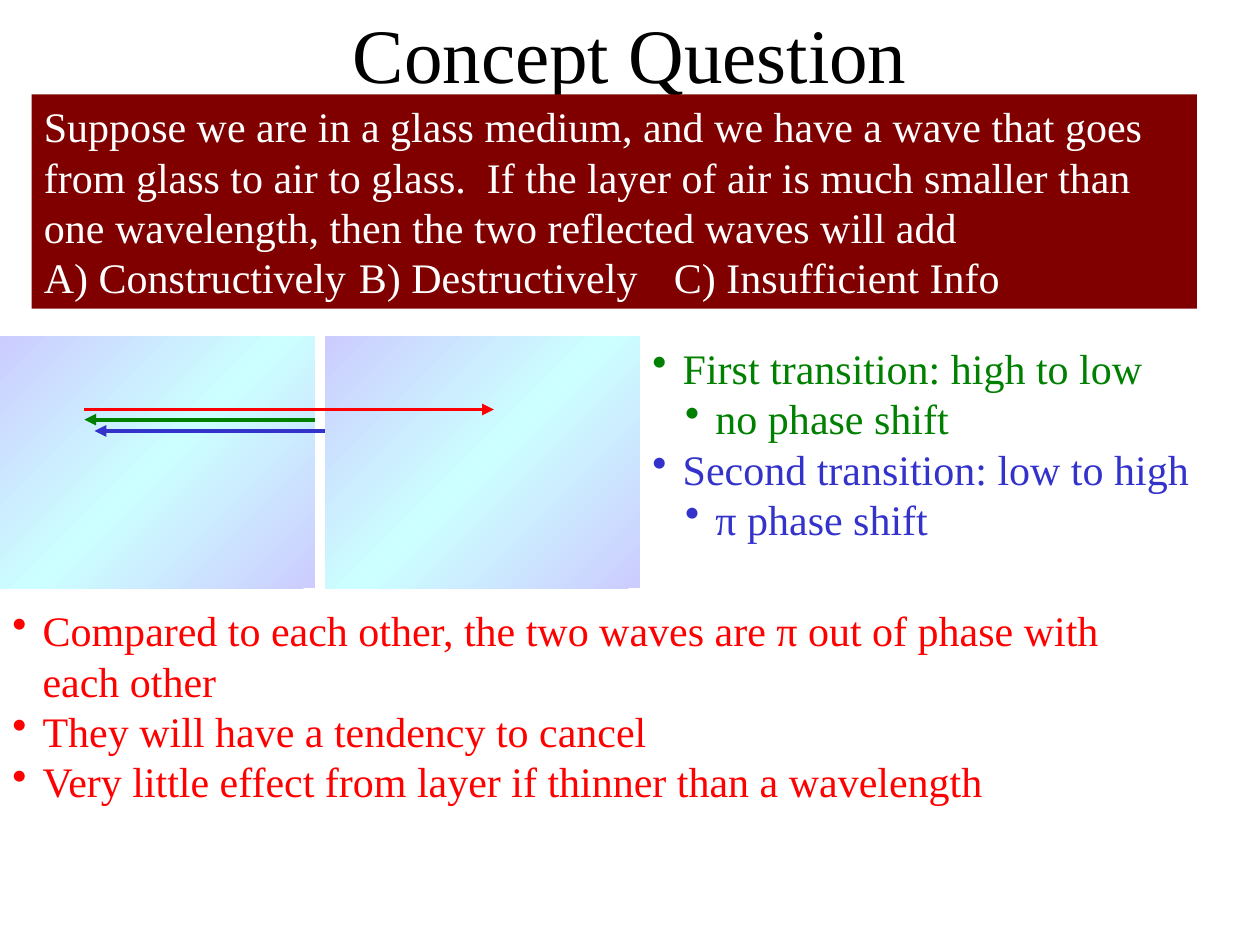
from copy import deepcopy

from lxml.etree import SubElement
from pptx import Presentation
from pptx.dml.color import RGBColor
from pptx.enum.shapes import MSO_CONNECTOR, MSO_SHAPE
from pptx.enum.text import MSO_ANCHOR, MSO_AUTO_SIZE, PP_ALIGN
from pptx.oxml.ns import qn
from pptx.util import Inches, Pt

FONT = "Times New Roman"
COLORS = {
    "black": "000000", "white": "FFFFFF", "maroon": "800000",
    "red": "FF0000", "green": "008000", "blue": "3333CC",
    "lavender": "CCCCFF", "cyan": "CCFFFF",
}

TITLE = "Concept Question"
QUESTION = [
    "Suppose we are in a glass medium, and we have a wave that goes from glass "
    "to air to glass.  If the layer of air is much smaller than one wavelength, "
    "then the two reflected waves will add",
    "A) Constructively\tB) Destructively\tC) Insufficient Info",
]
TRANSITIONS = [
    ("First transition: high to low", 0, "green"),
    ("no phase shift", 1, "green"),
    ("Second transition: low to high", 0, "blue"),
    ("π phase shift", 1, "blue"),
]
CONCLUSIONS = [
    ("Compared to each other, the two waves are π out of phase with each other", 0, "red"),
    ("They will have a tendency to cancel", 0, "red"),
    ("Very little effect from layer if thinner than a wavelength", 0, "red"),
]

GLASS_TOP, GLASS_WIDTH, GLASS_HEIGHT, AIR_GAP = 2.67, 2.5, 2, 0.08
SECOND_GLASS = GLASS_WIDTH + AIR_GAP
GLASS_STOPS = [(0, "lavender"), (0.5, "cyan"), (1, "lavender")]
WAVES = [
    (0.67, 3.92, 3.25, "red", "tailEnd"),
    (0.67, GLASS_WIDTH, 3.33, "green", "headEnd"),
    (0.75, SECOND_GLASS, 3.42, "blue", "headEnd"),
]
HANGING = 0.24
LEVEL_INDENTS = [HANGING, 0.5]


def rgb(name):
    return RGBColor.from_string(COLORS[name])


def style(paragraph, size, color):
    for run in paragraph.runs:
        run.font.name = FONT
        run.font.size = Pt(size)
        run.font.color.rgb = rgb(color)


def add_bullet(paragraph, level):
    paragraph.level = level
    properties = paragraph._p.get_or_add_pPr()
    properties.set("marL", str(Inches(LEVEL_INDENTS[level])))
    properties.set("indent", str(-Inches(HANGING)))
    SubElement(properties, qn("a:buFontTx"))
    SubElement(properties, qn("a:buChar"), char="•")


def add_text(slide, left, top, width, height, lines, bulleted=True):
    box = slide.shapes.add_textbox(Inches(left), Inches(top), Inches(width), Inches(height))
    frame = box.text_frame
    frame.word_wrap = True
    frame.auto_size = MSO_AUTO_SIZE.SHAPE_TO_FIT_TEXT
    frame.text = "\n".join(text for text, level, color in lines)
    for paragraph, (text, level, color) in zip(frame.paragraphs, lines):
        if bulleted:
            add_bullet(paragraph, level)
        style(paragraph, 24, color)
    return box


def add_glass(slide, left):
    glass = slide.shapes.add_shape(
        MSO_SHAPE.RECTANGLE, Inches(left), Inches(GLASS_TOP),
        Inches(GLASS_WIDTH), Inches(GLASS_HEIGHT))
    glass.shadow.inherit = False
    glass.line.fill.background()
    glass.fill.gradient()
    glass.fill.gradient_angle = 315
    stop_list = glass._element.spPr.find(qn("a:gradFill")).find(qn("a:gsLst"))
    stop_list.append(deepcopy(stop_list[-1]))
    for stop, (position, color) in zip(glass.fill.gradient_stops, GLASS_STOPS):
        stop.position = position
        stop.color.rgb = rgb(color)


def add_wave(slide, start, end, height, color, arrow_end):
    wave = slide.shapes.add_connector(
        MSO_CONNECTOR.STRAIGHT, Inches(start), Inches(height), Inches(end), Inches(height))
    wave.line.color.rgb = rgb(color)
    wave.line.width = Pt(2.25)
    SubElement(wave.line._get_or_add_ln(), qn(f"a:{arrow_end}"), type="triangle")
    SubElement(wave._element.spPr, qn("a:effectLst"))


def main():
    presentation = Presentation()
    presentation.slide_width, presentation.slide_height = Inches(10), Inches(7.5)
    slide = presentation.slides.add_slide(presentation.slide_layouts[5])

    title = slide.shapes.title
    title.left, title.top, title.width, title.height = 0, 0, Inches(10), Inches(0.83)
    title.text_frame.text = TITLE
    title.text_frame.vertical_anchor = MSO_ANCHOR.TOP
    title.text_frame.auto_size = MSO_AUTO_SIZE.SHAPE_TO_FIT_TEXT
    heading = title.text_frame.paragraphs[0]
    heading.alignment = PP_ALIGN.CENTER
    style(heading, 44, "black")

    question = add_text(slide, 0.25, 0.75, 9.25, 1.7,
                        [(text, 0, "white") for text in QUESTION], bulleted=False)
    question.fill.solid()
    question.fill.fore_color.rgb = rgb("maroon")

    for left in (0, SECOND_GLASS):
        add_glass(slide, left)
    for wave in WAVES:
        add_wave(slide, *wave)

    add_text(slide, SECOND_GLASS + GLASS_WIDTH, GLASS_TOP, 4.92, 1.7, TRANSITIONS)
    add_text(slide, 0, 4.75, 9.17, 1.7, CONCLUSIONS)

    presentation.save("out.pptx")


if __name__ == "__main__":
    main()
